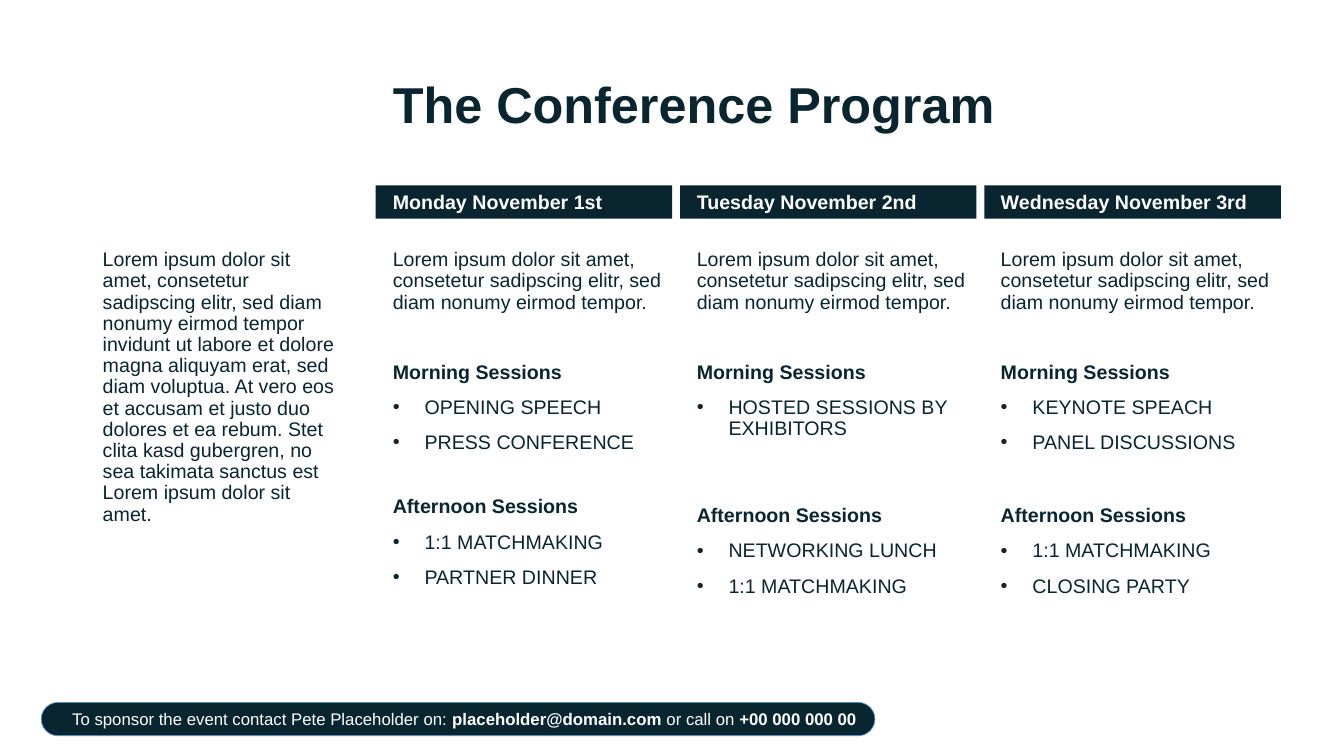
from lxml.etree import SubElement
from pptx import Presentation
from pptx.dml.color import RGBColor
from pptx.enum.shapes import MSO_SHAPE
from pptx.enum.text import MSO_ANCHOR
from pptx.oxml.ns import qn
from pptx.util import Cm, Pt

NAVY = RGBColor(0x08, 0x25, 0x30)
WHITE = RGBColor(0xFF, 0xFF, 0xFF)
BLUE = RGBColor(0x5B, 0x9B, 0xD5)

TITLE = "The Conference Program"
SUMMARY = "Lorem ipsum dolor sit amet, consetetur sadipscing elitr, sed diam nonumy eirmod tempor."
SIDEBAR = (
    "Lorem ipsum dolor sit amet, consetetur sadipscing elitr, sed diam nonumy eirmod tempor "
    "invidunt ut labore et dolore magna aliquyam erat, sed diam voluptua. At vero eos et accusam "
    "et justo duo dolores et ea rebum. Stet clita kasd gubergren, no sea takimata sanctus est "
    "Lorem ipsum dolor sit amet."
)
# Day, morning sessions, afternoon sessions, top of the afternoon block in cm
DAYS = [
    ("Monday November 1st", ["OPENING SPEECH", "PRESS CONFERENCE"],
     ["1:1 MATCHMAKING", "PARTNER DINNER"], 12.4),
    ("Tuesday November 2nd", ["HOSTED SESSIONS BY EXHIBITORS"],
     ["NETWORKING LUNCH", "1:1 MATCHMAKING"], 12.62),
    ("Wednesday November 3rd", ["KEYNOTE SPEACH", "PANEL DISCUSSIONS"],
     ["1:1 MATCHMAKING", "CLOSING PARTY"], 12.62),
]
# Text, bold
CONTACT = [
    ("To sponsor the event contact Pete Placeholder on: ", False),
    ("placeholder@domain.com", True),
    (" or call on ", False),
    ("+00 000 000 00", True),
]

BODY = {"name": "Arial", "size": Pt(14), "bold": False}
STRONG = BODY | {"bold": True}
HEADLINE = STRONG | {"size": Pt(36)}
SMALL = BODY | {"size": Pt(12)}

GAP, SECTION_GAP = Pt(10), Pt(35)
INDENT = Cm(0.8)
TEXT_LEFT, TEXT_PITCH, TEXT_WIDTH = 9.65, 7.66, 7.3
BAR_LEFT, BAR_PITCH, BAR_WIDTH = 9.47, 7.67, 7.47
BAR_TOP, BAR_HEIGHT = 4.67, 0.84

presentation = Presentation()
presentation.slide_width = Cm(33.87)
presentation.slide_height = Cm(19.05)
slide = presentation.slides.add_slide(presentation.slide_layouts[6])


def add_bar(preset, *bounds):
    bar = slide.shapes.add_shape(preset, *map(Cm, bounds))
    bar.shadow.inherit = False
    bar.fill.solid()
    bar.fill.fore_color.rgb = NAVY
    bar.line.fill.background()
    return bar


def add_text(bounds, paragraphs, color=NAVY, anchor=MSO_ANCHOR.TOP):
    """Each paragraph is (runs, space before, bulleted); each run is (text, font format)."""
    frame = slide.shapes.add_textbox(*map(Cm, bounds)).text_frame
    frame.word_wrap = True
    frame.vertical_anchor = anchor
    for index, (runs, space_before, bulleted) in enumerate(paragraphs):
        paragraph = frame.add_paragraph() if index else frame.paragraphs[0]
        paragraph.line_spacing = 0.9
        paragraph.space_before = space_before
        if bulleted:
            properties = paragraph._p.get_or_add_pPr()
            properties.set("marL", str(INDENT))
            properties.set("indent", str(-INDENT))
            SubElement(properties, qn("a:buFont"), typeface="Arial")
            SubElement(properties, qn("a:buChar"), char="•")
        for text, font_format in runs:
            run = paragraph.add_run()
            run.text = text
            for attribute, value in font_format.items():
                setattr(run.font, attribute, value)
            run.font.color.rgb = color


def add_line(bounds, runs, color=NAVY):
    add_text(bounds, [(runs, 0, False)], color, MSO_ANCHOR.MIDDLE)


def sessions(heading, names, space_before=0):
    return [([(heading, STRONG)], space_before, False)] + [
        ([(name, BODY)], GAP, True) for name in names
    ]


add_line((TEXT_LEFT, 1.7, 18.36, 1.98), [(TITLE, HEADLINE)])
add_text((2.34, 6.17, 6.55, 10.44), [([(SIDEBAR, BODY)], 0, False)])

for column, (day, morning, afternoon, afternoon_top) in enumerate(DAYS):
    left = TEXT_LEFT + column * TEXT_PITCH
    add_bar(MSO_SHAPE.RECTANGLE, BAR_LEFT + column * BAR_PITCH, BAR_TOP, BAR_WIDTH, BAR_HEIGHT)
    add_line((left, 4.71, TEXT_WIDTH, BAR_HEIGHT), [(day, STRONG)], WHITE)
    add_text(
        (left, 6.17, TEXT_WIDTH, 6.1),
        [([(SUMMARY, BODY)], 0, False)] + sessions("Morning Sessions", morning, SECTION_GAP),
    )
    add_text((left, afternoon_top, TEXT_WIDTH, 4.2), sessions("Afternoon Sessions", afternoon))

contact_bar = add_bar(MSO_SHAPE.ROUNDED_RECTANGLE, 1.04, 17.7, 21.01, BAR_HEIGHT)
contact_bar.adjustments[0] = 0.5
contact_bar.line.color.rgb = BLUE
contact_bar.line.width = Pt(0.5)
add_line(
    (1.57, 17.81, 20.29, 0.66),
    [(text, SMALL | {"bold": bold}) for text, bold in CONTACT],
    WHITE,
)

presentation.save("out.pptx")
